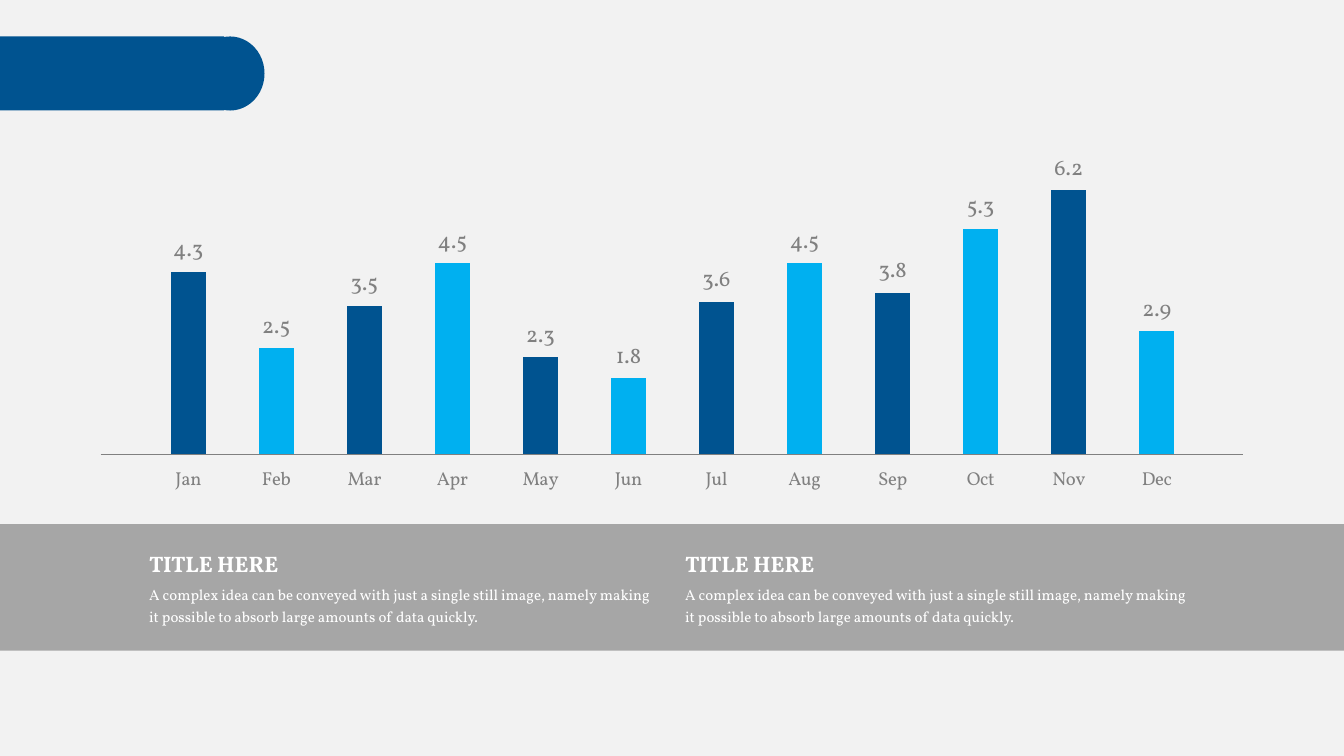
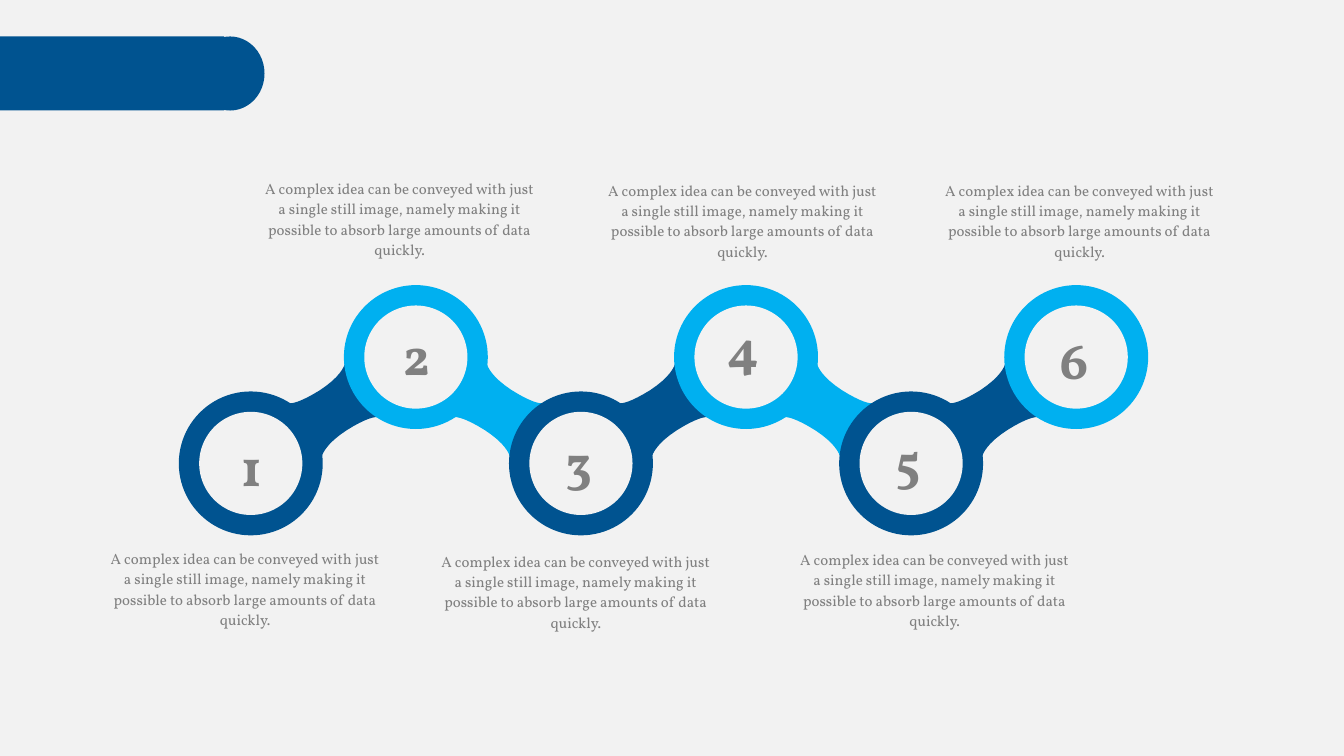
from dataclasses import dataclass

from lxml.etree import SubElement
from pptx import Presentation
from pptx.chart.data import CategoryChartData
from pptx.dml.color import RGBColor
from pptx.enum.chart import XL_CHART_TYPE, XL_LABEL_POSITION
from pptx.enum.shapes import MSO_CONNECTOR, MSO_SHAPE
from pptx.enum.text import MSO_ANCHOR, PP_ALIGN
from pptx.oxml.ns import qn
from pptx.util import Cm, Pt


@dataclass(frozen=True)
class Theme:
    font: str = "Vollkorn"
    paper: RGBColor = RGBColor(0xF2, 0xF2, 0xF2)
    navy: RGBColor = RGBColor(0x00, 0x53, 0x90)
    sky: RGBColor = RGBColor(0x00, 0xB0, 0xF0)
    band: RGBColor = RGBColor(0xA6, 0xA6, 0xA6)
    text: RGBColor = RGBColor(0x80, 0x80, 0x80)
    white: RGBColor = RGBColor(0xFF, 0xFF, 0xFF)
    body: Pt = Pt(8)
    axis: Pt = Pt(10)
    heading: Pt = Pt(12)
    number: Pt = Pt(28)


@dataclass(frozen=True)
class Box:
    left: float
    top: float
    width: float
    height: float

    def lengths(self):
        return Cm(self.left), Cm(self.top), Cm(self.width), Cm(self.height)

    def inside(self, left, top, width, height):
        return Box(self.left + left, self.top + top, width, height)


THEME = Theme()
SLIDE_WIDTH, SLIDE_HEIGHT = 25.4, 14.29
BODY = (
    "A complex idea can be conveyed with just a single still image, "
    "namely making it possible to absorb large amounts of data quickly."
)
MONTHLY_VALUES = {
    "Jan": 4.3, "Feb": 2.5, "Mar": 3.5, "Apr": 4.5, "May": 2.3, "Jun": 1.8,
    "Jul": 3.6, "Aug": 4.5, "Sep": 3.8, "Oct": 5.3, "Nov": 6.2, "Dec": 2.9,
}
RING = 2.72
HOLE = 1.95
NUMBER = 1.47
STEP_X = 3.12
STEP_Y = 2.01
NUMBER_SHIFTS = [(0.01, 0.04), (0.01, -0.04), (-0.04, -0.04),
                 (-0.06, -0.19), (-0.06, -0.06), (-0.04, 0.02)]
CAPTION_SPOTS = [(1.83, 10.24), (4.75, 3.25), (8.08, 10.29),
                 (11.23, 3.28), (14.86, 10.26), (17.6, 3.28)]
LINK_EDGE = [
    [(0.23, -0.99), (0.23, -0.99), (0.3, -0.74), (-0.25, -0.38)],
    [(-0.25, -0.38), (-0.81, -0.03), (-0.89, -0.15), (-0.89, -0.15)],
]


def style_font(font, size, color, bold=False):
    font.name = THEME.font
    font.size = size
    font.bold = bold
    font.color.rgb = color


def paint(shape, color):
    shape.shadow.inherit = False
    shape.fill.solid()
    shape.fill.fore_color.rgb = color
    shape.line.fill.background()


def add_filled(page, kind, box, color):
    shape = page.shapes.add_shape(kind, *box.lengths())
    paint(shape, color)
    return shape


def set_insets(frame, side, end):
    frame.margin_left = frame.margin_right = Cm(side)
    frame.margin_top = frame.margin_bottom = Cm(end)


def share_banner(deck, page, box):
    cap_width = 1.3
    bar = box.inside(0, 0, 4.24, box.height)
    cap = box.inside(box.width - cap_width, 0, cap_width, box.height)
    parts = [(MSO_SHAPE.RECTANGLE, bar), (MSO_SHAPE.OVAL, cap)]
    for number, (kind, part) in enumerate(parts, 20):
        shape = add_filled(page, kind, part, THEME.navy)
        shape.element.nvSpPr.cNvPr.set("id", str(number))
        deck.slide_master.shapes.element.append(shape.element)


def add_monthly_chart(page, box):
    data = CategoryChartData()
    data.categories = list(MONTHLY_VALUES)
    data.add_series("Series 1", list(MONTHLY_VALUES.values()))
    chart = page.shapes.add_chart(
        XL_CHART_TYPE.COLUMN_CLUSTERED, *box.lengths(), data
    ).chart
    chart.has_legend = False
    chart.has_title = False
    style_font(chart.font, THEME.axis, THEME.text)

    months = chart.category_axis
    months.format.line.fill.background()
    style_font(months.tick_labels.font, THEME.axis, THEME.text)
    scale = chart.value_axis
    scale.minimum_scale, scale.maximum_scale = 0, 7
    scale.has_major_gridlines = False
    scale.visible = False

    plot = chart.plots[0]
    plot.gap_width = 150
    plot.vary_by_categories = False
    series = plot.series[0]
    series.format.fill.solid()
    series.format.fill.fore_color.rgb = THEME.sky
    for index in range(0, len(MONTHLY_VALUES), 2):
        fill = series.points[index].format.fill
        fill.solid()
        fill.fore_color.rgb = THEME.navy
    labels = series.data_labels
    labels.show_value = True
    labels.position = XL_LABEL_POSITION.OUTSIDE_END
    style_font(labels.font, THEME.heading, THEME.text)


def add_baseline(page, box):
    line = page.shapes.add_connector(
        MSO_CONNECTOR.STRAIGHT, Cm(box.left), Cm(box.top),
        Cm(box.left + box.width), Cm(box.top),
    )
    line.line.color.rgb = THEME.text
    line.line.width = Pt(0.5)
    SubElement(line.element.spPr, qn("a:effectLst"))


def add_text_band(page, box):
    add_filled(page, MSO_SHAPE.RECTANGLE, box, THEME.band)
    for left in (2.82, 12.95):
        column = box.inside(left, 0.38, 9.58, 1.55)
        frame = page.shapes.add_textbox(*column.lengths()).text_frame
        frame.word_wrap = True
        set_insets(frame, 0, 0)
        title = frame.paragraphs[0]
        title.text = "TITLE HERE"
        style_font(title.font, THEME.heading, THEME.white, bold=True)
        body = frame.add_paragraph()
        body.text = BODY
        body.space_before = Pt(3)
        style_font(body.font, THEME.body, THEME.white)
        for para in frame.paragraphs:
            para.line_spacing = 1.2


def curve_points(start, first, second, end, pieces=12):
    for piece in range(pieces + 1):
        t = piece / pieces
        u = 1 - t
        yield tuple(
            u**3 * a + 3 * u * u * t * b + 3 * u * t * t * c + t**3 * d
            for a, b, c, d in zip(start, first, second, end)
        )


def add_link(page, center_x, center_y, direction, color):
    edge = [point for curve in LINK_EDGE for point in curve_points(*curve)]
    outline = edge + [(-x, -y) for x, y in edge]
    points = [
        (Cm(center_x + direction * x), Cm(center_y + y)) for x, y in outline
    ]
    builder = page.shapes.build_freeform(*points[0])
    builder.add_line_segments(points[1:], close=True)
    paint(builder.convert_to_shape(), color)


def add_ring(page, box, number, shift, color):
    add_filled(page, MSO_SHAPE.OVAL, box, color)
    margin = (box.width - HOLE) / 2
    add_filled(page, MSO_SHAPE.OVAL,
               box.inside(margin, margin, HOLE, HOLE), THEME.paper)
    margin = (box.width - NUMBER) / 2
    spot = box.inside(margin + shift[0], margin + shift[1], NUMBER, NUMBER)
    label = page.shapes.add_shape(MSO_SHAPE.OVAL, *spot.lengths())
    label.shadow.inherit = False
    label.fill.background()
    label.line.fill.background()
    frame = label.text_frame
    frame.word_wrap = False
    frame.vertical_anchor = MSO_ANCHOR.MIDDLE
    set_insets(frame, 0, 0)
    para = frame.paragraphs[0]
    para.text = str(number)
    para.alignment = PP_ALIGN.CENTER
    style_font(para.font, THEME.number, THEME.text, bold=True)


def add_chain(page, box):
    count = len(NUMBER_SHIFTS)
    for index, shift in enumerate(NUMBER_SHIFTS):
        raised = index % 2
        color = THEME.sky if raised else THEME.navy
        ring = box.inside(index * STEP_X, 0 if raised else STEP_Y, RING, RING)
        if index < count - 1:
            add_link(page, ring.left + (RING + STEP_X) / 2,
                     box.top + (RING + STEP_Y) / 2,
                     -1 if raised else 1, color)
        add_ring(page, ring, index + 1, shift, color)


def add_caption(page, box):
    frame = page.shapes.add_textbox(*box.lengths()).text_frame
    frame.word_wrap = True
    set_insets(frame, 0.18, 0.1)
    para = frame.paragraphs[0]
    para.text = BODY
    para.alignment = PP_ALIGN.CENTER
    para.line_spacing = 1.14
    style_font(para.font, THEME.body, THEME.text)


def fill_chart_slide(page, box):
    add_monthly_chart(page, box.inside(2.31, 2.82, 20.8, 6.65))
    add_baseline(page, box.inside(1.9, 8.59, 21.6, 0))
    add_text_band(page, box.inside(0, 9.91, box.width, 2.39))


def fill_steps_slide(page, box):
    add_chain(page, box.inside(3.38, 5.39, 5 * STEP_X + RING, STEP_Y + RING))
    for left, top in CAPTION_SPOTS:
        add_caption(page, box.inside(left, top, 5.61, 1.87))


def main():
    deck = Presentation()
    deck.slide_width, deck.slide_height = Cm(SLIDE_WIDTH), Cm(SLIDE_HEIGHT)
    background = deck.slide_master.background.fill
    background.solid()
    background.fore_color.rgb = THEME.paper
    blank = deck.slide_layouts[6]
    canvas = Box(0, 0, SLIDE_WIDTH, SLIDE_HEIGHT)
    chart_page = deck.slides.add_slide(blank)
    share_banner(deck, chart_page, canvas.inside(0, 0.69, 5, 1.4))
    fill_chart_slide(chart_page, canvas)
    fill_steps_slide(deck.slides.add_slide(blank), canvas)
    deck.save("out.pptx")


if __name__ == "__main__":
    main()
